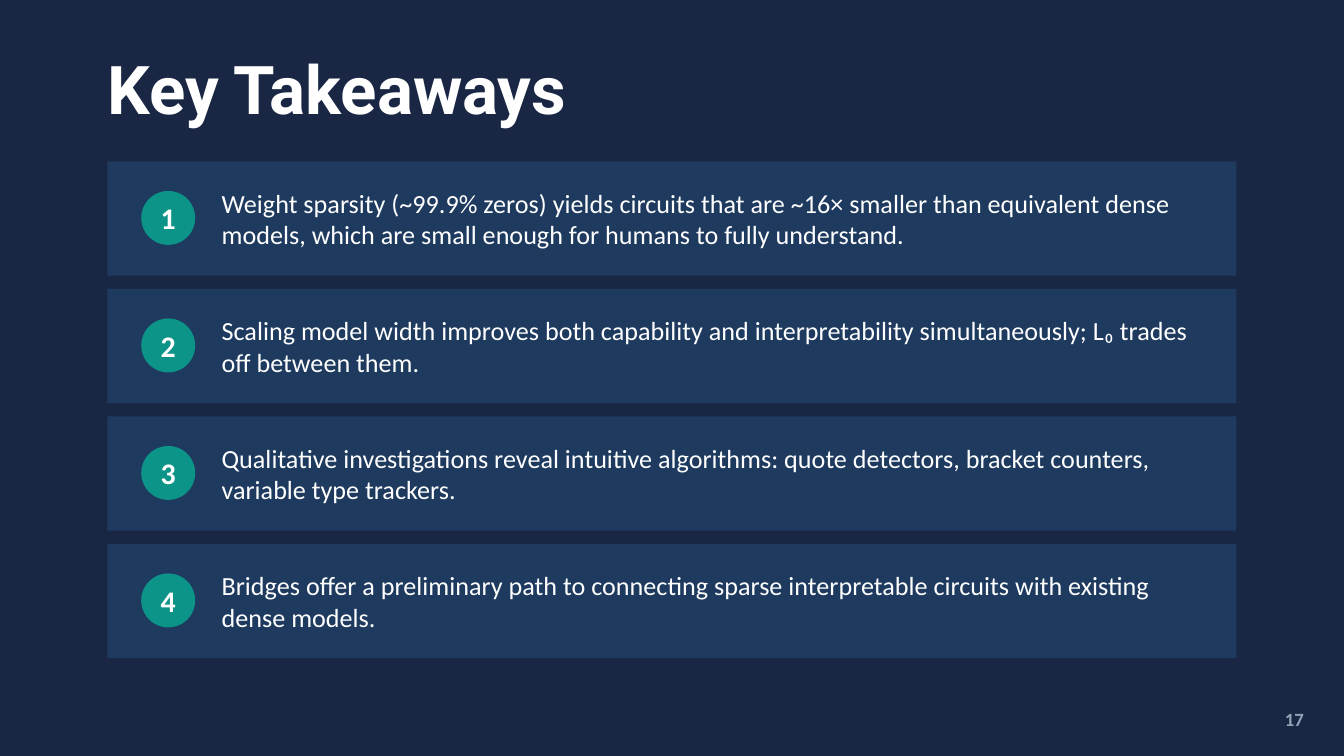
from dataclasses import dataclass

from pptx import Presentation
from pptx.dml import color
from pptx.enum import shapes, text
from pptx.util import Cm, Pt


@dataclass(frozen=True)
class Theme:
    background: str = "1A2744"
    card: str = "1E3A5F"
    accent: str = "0D9488"
    light: str = "FFFFFF"
    muted: str = "94A3B8"
    heading_font: str = "Roboto"
    body_font: str = "Calibri"
    title_size: int = 36
    badge_size: int = 16
    body_size: int = 14
    number_size: int = 10


@dataclass(frozen=True)
class Box:
    left: float
    top: float
    width: float
    height: float

    def lengths(self):
        return Cm(self.left), Cm(self.top), Cm(self.width), Cm(self.height)


THEME = Theme()
TITLE_BOX = Box(2.03, 0.76, 21.34, 1.78)
CARDS_BOX = Box(2.03, 3.05, 21.34, 9.39)
NUMBER_BOX = Box(23.37, 13.21, 1.52, 0.76)
CARD_GAP = 0.25
TAKEAWAYS = [
    "Weight sparsity (~99.9% zeros) yields circuits that are ~16× smaller than "
    "equivalent dense models, which are small enough for humans to fully understand.",
    "Scaling model width improves both capability and interpretability "
    "simultaneously; L₀ trades off between them.",
    "Qualitative investigations reveal intuitive algorithms: quote detectors, "
    "bracket counters, variable type trackers.",
    "Bridges offer a preliminary path to connecting sparse interpretable circuits "
    "with existing dense models.",
]


def rgb(value):
    return color.RGBColor.from_string(value)


def write(sp, content, size, font=THEME.body_font, fill=THEME.light,
          bold=False, align=text.PP_ALIGN.LEFT, inset=0):
    tf = sp.text_frame
    tf.word_wrap = True
    tf.auto_size = text.MSO_AUTO_SIZE.NONE
    tf.vertical_anchor = text.MSO_ANCHOR.MIDDLE
    tf.margin_left = tf.margin_right = Cm(inset)
    tf.margin_top = tf.margin_bottom = Cm(inset / 2)
    p = tf.paragraphs[0]
    p.alignment = align
    r = p.add_run()
    r.text = content
    r.font.name = font
    r.font.size = Pt(size)
    r.font.bold = bold
    r.font.color.rgb = rgb(fill)


def add_filled(s, kind, box, fill):
    sp = s.shapes.add_shape(kind, *box.lengths())
    sp.shadow.inherit = False
    sp.fill.solid()
    sp.fill.fore_color.rgb = rgb(fill)
    sp.line.fill.background()
    return sp


def place_title(s, box, content):
    sp = s.shapes.title
    sp.left, sp.top, sp.width, sp.height = box.lengths()
    write(sp, content, THEME.title_size, font=THEME.heading_font, bold=True)


def place_card(s, box, number, content):
    add_filled(s, shapes.MSO_SHAPE.RECTANGLE, box, THEME.card)
    badge = Box(box.left + 0.64, box.top + 0.56, 1.02, 1.02)
    sp = add_filled(s, shapes.MSO_SHAPE.OVAL, badge, THEME.accent)
    write(sp, str(number), THEME.badge_size, bold=True, align=text.PP_ALIGN.CENTER)
    body = Box(box.left + 2.16, box.top + 0.25, box.width - 2.8, box.height - 0.5)
    write(s.shapes.add_textbox(*body.lengths()), content, THEME.body_size)


def place_cards(s, box, items):
    height = (box.height - CARD_GAP * (len(items) - 1)) / len(items)
    for i, item in enumerate(items):
        top = box.top + i * (height + CARD_GAP)
        place_card(s, Box(box.left, top, box.width, height), i + 1, item)


def place_number(s, box, number):
    write(s.shapes.add_textbox(*box.lengths()), str(number), THEME.number_size,
          fill=THEME.muted, bold=True, align=text.PP_ALIGN.RIGHT, inset=0.25)


def main():
    prs = Presentation()
    prs.slide_width, prs.slide_height = Cm(25.4), Cm(14.29)
    s = prs.slides.add_slide(prs.slide_layouts.get_by_name("Title Only"))
    s.background.fill.solid()
    s.background.fill.fore_color.rgb = rgb(THEME.background)
    place_title(s, TITLE_BOX, "Key Takeaways")
    place_cards(s, CARDS_BOX, TAKEAWAYS)
    place_number(s, NUMBER_BOX, 17)
    prs.save("out.pptx")


if __name__ == "__main__":
    main()
